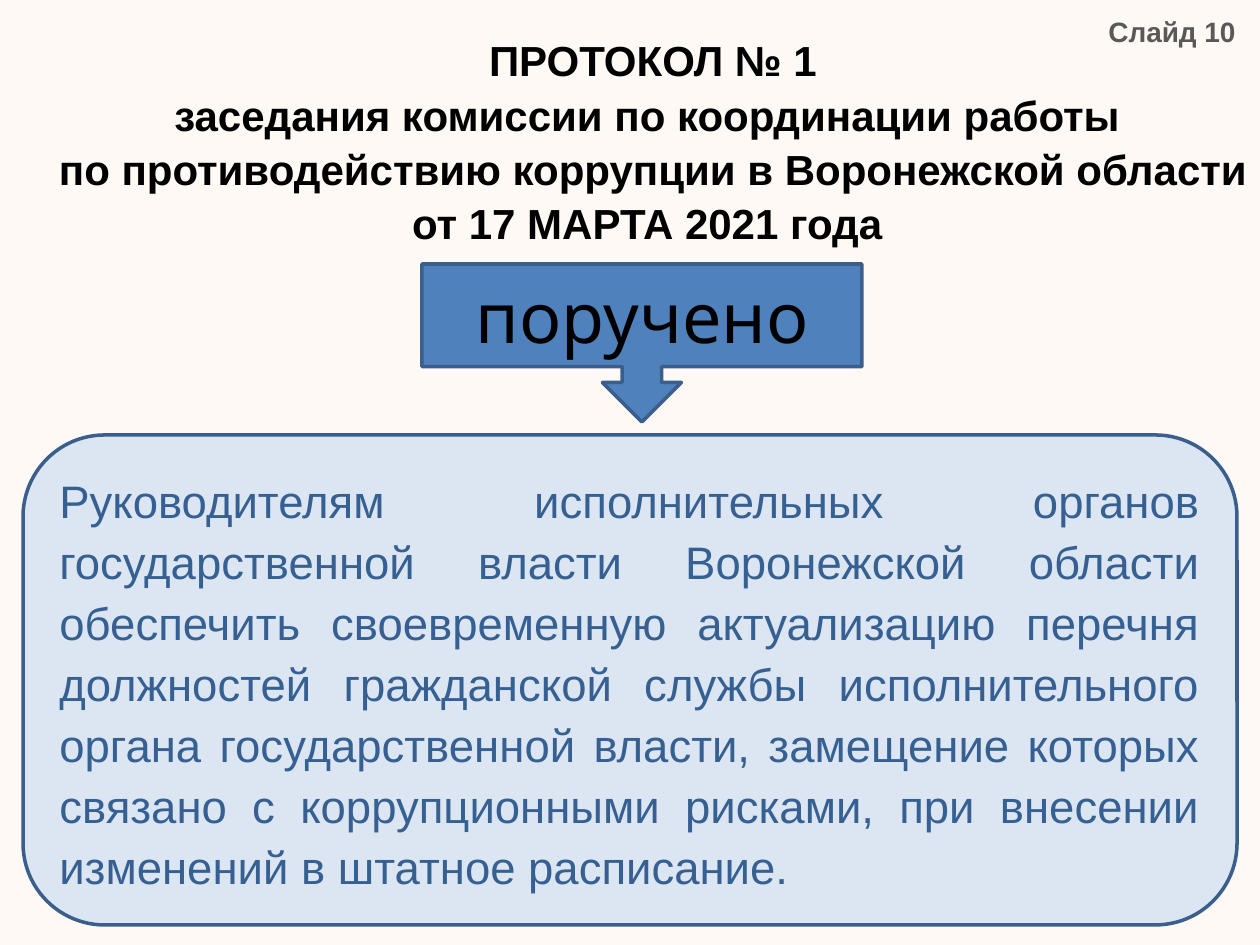
from dataclasses import dataclass

from pptx import Presentation
from pptx import util as u
from pptx.dml.color import RGBColor
from pptx.enum import shapes, text

PX_PER_INCH = 126


def px(length):
    return u.Inches(length / PX_PER_INCH)


@dataclass(frozen=True)
class Theme:
    background: str = "FEF9F4"
    heading: str = "000000"
    page_label: str = "595959"
    order: str = "376092"
    panel: str = "DCE6F2"
    accent: str = "4F81BD"
    outline: str = "3A5F8C"
    font: str = "Arial"
    callout_font: str = "Cabin"
    heading_size: int = 24
    label_size: int = 16
    order_size: int = 26
    callout_size: int = 40
    outline_width: int = 2


class SlideBuilder:
    def __init__(self, slide, theme):
        self.slide = slide
        self.theme = theme
        fill = slide.background.fill
        fill.solid()
        fill.fore_color.rgb = RGBColor.from_string(theme.background)

    def set_words(self, shape, words, size, color, align, font=None, bold=False,
                  anchor=text.MSO_ANCHOR.MIDDLE, spacing=None, after=0):
        frame = shape.text_frame
        frame.word_wrap = True
        frame.vertical_anchor = anchor
        frame.text = words
        for paragraph in frame.paragraphs:
            paragraph.alignment = align
            paragraph.line_spacing = spacing
            paragraph.space_after = u.Pt(after)
            for run in paragraph.runs:
                run.font.name = font or self.theme.font
                run.font.size = u.Pt(size)
                run.font.bold = bold
                run.font.color.rgb = RGBColor.from_string(color)

    def label(self, box, words, size, color, align, **style):
        shape = self.slide.shapes.add_textbox(*map(px, box))
        self.set_words(shape, words, size, color, align, bold=True, **style)

    def block(self, kind, box, fill, words, size, color, align, **style):
        shape = self.slide.shapes.add_shape(kind, *map(px, box))
        shape.shadow.inherit = False
        shape.fill.solid()
        shape.fill.fore_color.rgb = RGBColor.from_string(fill)
        shape.line.color.rgb = RGBColor.from_string(self.theme.outline)
        shape.line.width = u.Pt(self.theme.outline_width)
        self.set_words(shape, words, size, color, align, **style)


def main():
    theme = Theme()
    align = text.PP_ALIGN
    kinds = shapes.MSO_SHAPE
    deck = Presentation()
    deck.slide_width, deck.slide_height = px(1260), px(945)
    protocol = SlideBuilder(deck.slides.add_slide(deck.slide_layouts[6]), theme)

    protocol.label(
        (23, 6, 1260, 267),
        "ПРОТОКОЛ № 1\vзаседания комиссии по координации работы \v"
        "по противодействию коррупции в Воронежской области "
        "от 17 МАРТА 2021 года ",
        theme.heading_size, theme.heading, align.CENTER, spacing=1.08)
    protocol.label(
        (1082, 8, 166, 47), "Слайд 10",
        theme.label_size, theme.page_label, align.RIGHT,
        anchor=text.MSO_ANCHOR.TOP)
    protocol.block(
        kinds.ROUNDED_RECTANGLE, (23, 435, 1214, 490), theme.panel,
        "Руководителям исполнительных органов государственной власти "
        "Воронежской области обеспечить своевременную актуализацию перечня "
        "должностей гражданской службы исполнительного органа "
        "государственной власти, замещение которых связано с "
        "коррупционными рисками, при внесении изменений в штатное "
        "расписание.",
        theme.order_size, theme.order, align.JUSTIFY, spacing=1.12, after=12)
    protocol.block(
        kinds.DOWN_ARROW_CALLOUT, (422, 264, 440, 158), theme.accent,
        "поручено", theme.callout_size, theme.heading, align.CENTER,
        font=theme.callout_font)

    deck.save("out.pptx")


if __name__ == "__main__":
    main()
